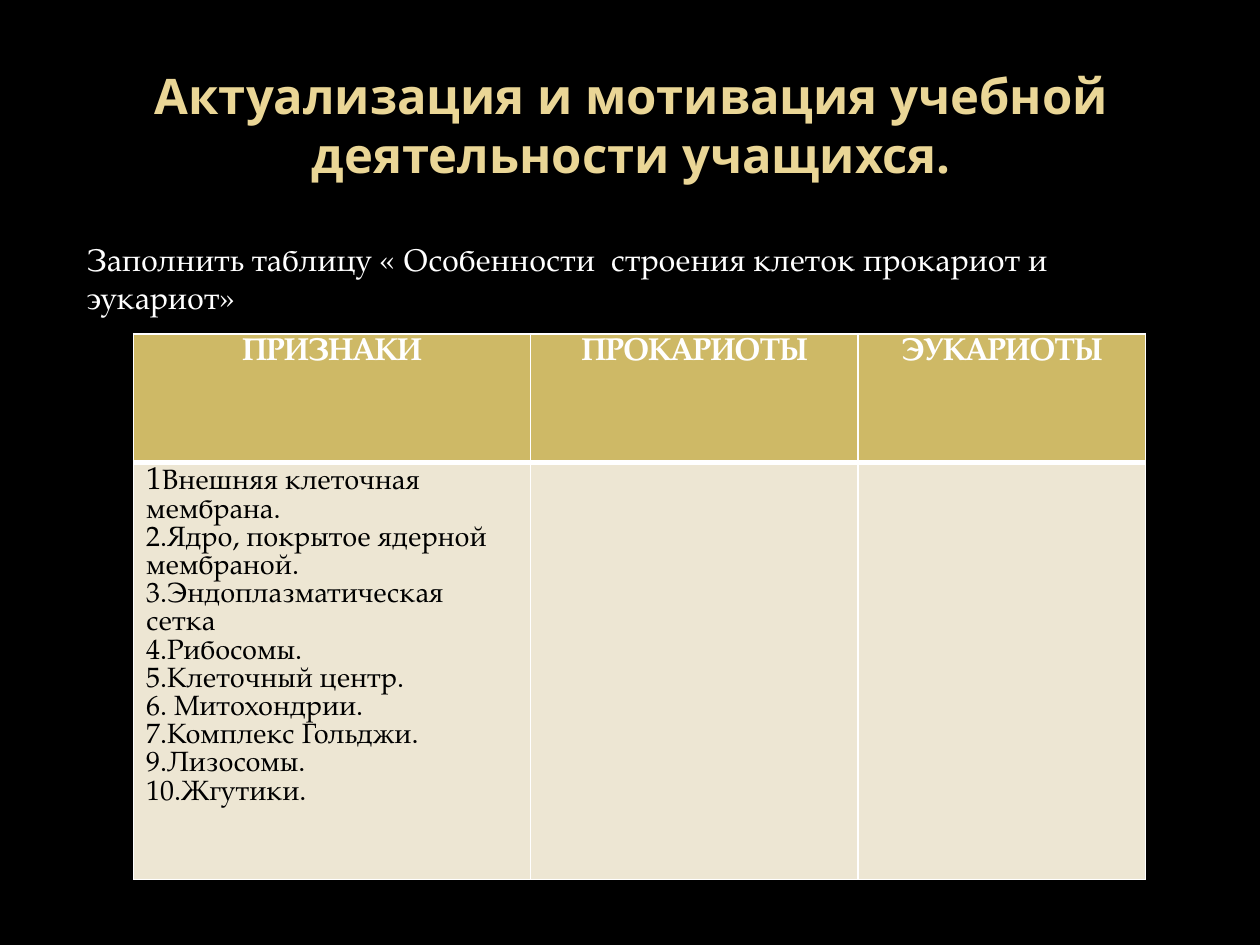
from dataclasses import dataclass

from lxml import etree
from pptx import Presentation
from pptx.dml.color import RGBColor
from pptx.enum.text import MSO_ANCHOR, PP_ALIGN
from pptx.oxml.ns import qn
from pptx.util import Inches, Pt

LEFT, CENTER = PP_ALIGN.LEFT, PP_ALIGN.CENTER
MIDDLE, TOP = MSO_ANCHOR.MIDDLE, MSO_ANCHOR.TOP


@dataclass(frozen=True)
class Theme:
    back: str = "000000"
    gold: str = "EAD696"
    head: str = "CEB966"
    cell: str = "EDE6D3"
    light: str = "FFFFFF"
    dark: str = "000000"
    title_font: str = "Open Sans"
    font: str = "TeX Gyre Pagella"
    title_size: int = 28
    size: int = 18
    small: int = 16


def write(par, text, *, font, size, color, bold=False, align=LEFT):
    par.alignment = align
    run = par.add_run()
    run.text = text
    run.font.name = font
    run.font.size = Pt(size)
    run.font.bold = bold
    run.font.color.rgb = RGBColor.from_string(color)


def edge(cell, color, **widths):
    """Draw cell borders; widths are points keyed by lnL, lnR, lnT, lnB."""
    props = cell._tc.get_or_add_tcPr()
    for spot, (side, width) in enumerate(widths.items()):
        line = etree.Element(qn(f"a:{side}"), w=str(Pt(width)))
        fill = etree.SubElement(line, qn("a:solidFill"))
        etree.SubElement(fill, qn("a:srgbClr"), val=color)
        props.insert(spot, line)


class Page:
    def __init__(self, deck, theme):
        self.theme = theme
        self.slide = deck.slides.add_slide(deck.slide_layouts[5])
        fill = self.slide.background.fill
        fill.solid()
        fill.fore_color.rgb = RGBColor.from_string(theme.back)

    def title(self, text, left, top, width, height):
        look = self.theme
        shape = self.slide.shapes.title
        shape.left, shape.top = Inches(left), Inches(top)
        shape.width, shape.height = Inches(width), Inches(height)
        frame = shape.text_frame
        frame.vertical_anchor = MIDDLE
        write(frame.paragraphs[0], text, font=look.title_font, bold=True,
              size=look.title_size, color=look.gold, align=CENTER)

    def text(self, text, left, top, width, height):
        look = self.theme
        box = self.slide.shapes.add_textbox(
            Inches(left), Inches(top), Inches(width), Inches(height))
        frame = box.text_frame
        frame.word_wrap = True
        frame.vertical_anchor = TOP
        par = frame.paragraphs[0]
        par.space_before = Pt(4)
        write(par, text, font=look.font, size=look.size, color=look.light)

    def table(self, heads, traits, left, top, cols, rows):
        look = self.theme
        grid = self.slide.shapes.add_table(
            len(rows), len(cols), Inches(left), Inches(top),
            Inches(sum(cols)), Inches(sum(rows))).table
        for col, width in zip(grid.columns, cols):
            col.width = Inches(width)
        for row, height in zip(grid.rows, rows):
            row.height = Inches(height)
        for num, row in enumerate(grid.rows):
            for cell in row.cells:
                cell.margin_top = Inches(0.03)
                cell.fill.solid()
                cell.fill.fore_color.rgb = RGBColor.from_string(
                    look.cell if num else look.head)
                edge(cell, look.light, lnL=1, lnR=1,
                     lnT=1 if num == 0 else 3, lnB=3 if num == 0 else 1)
        for cell, head in zip(grid.rows[0].cells, heads):
            write(cell.text_frame.paragraphs[0], head, font=look.font,
                  size=look.size, color=look.light, bold=True, align=CENTER)
        self.traits(grid.cell(1, 0).text_frame, traits)

    def traits(self, frame, items):
        """List the traits; the very first character is set larger."""
        look = self.theme
        form = dict(font=look.font, color=look.dark)
        par = frame.paragraphs[0]
        write(par, items[0][0], size=look.size, **form)
        write(par, items[0][1:], size=look.small, **form)
        for item in items[1:]:
            write(frame.add_paragraph(), item, size=look.small, **form)


def main():
    deck = Presentation()
    deck.slide_width, deck.slide_height = Inches(10), Inches(7.5)
    page = Page(deck, Theme())
    page.title("Актуализация и мотивация учебной деятельности учащихся.",
               0.51, 0.36, 9, 1.25)
    page.text("Заполнить таблицу « Особенности  строения клеток "
              "прокариот и эукариот»", 0.59, 1.86, 9, 3.7)
    traits = [
        "1Внешняя клеточная мембрана.",
        "2.Ядро, покрытое ядерной мембраной.",
        "3.Эндоплазматическая сетка",
        "4.Рибосомы.",
        "5.Клеточный центр.",
        "6. Митохондрии.",
        "7.Комплекс Гольджи.",
        "9.Лизосомы.",
        "10.Жгутики.",
    ]
    page.table(["ПРИЗНАКИ", "ПРОКАРИОТЫ", "ЭУКАРИОТЫ"], traits,
               1.06, 2.65, cols=[3.15, 2.6, 2.28], rows=[1.02, 3.07])
    deck.save("out.pptx")


if __name__ == "__main__":
    main()
